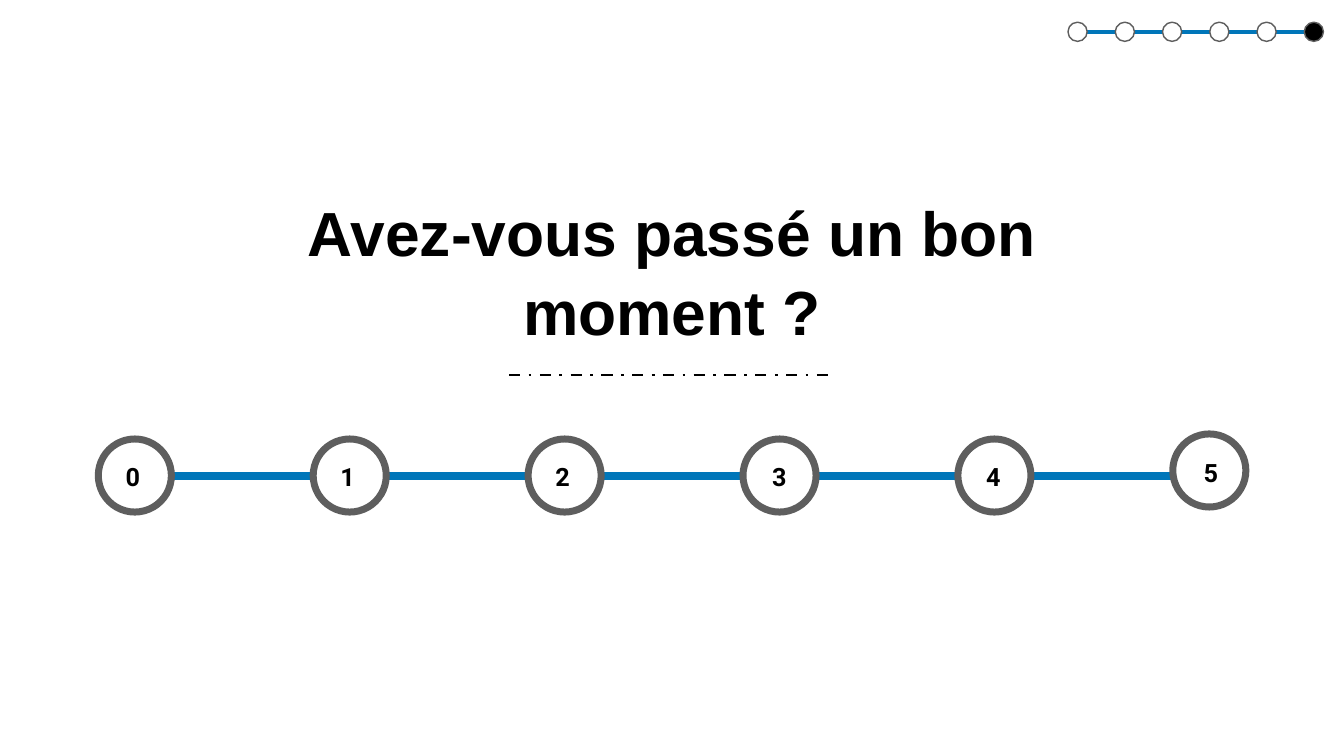
from lxml import etree
from pptx import Presentation
from pptx.dml.color import RGBColor
from pptx.enum.dml import MSO_LINE
from pptx.enum.shapes import MSO_CONNECTOR, MSO_SHAPE
from pptx.enum.text import MSO_ANCHOR, PP_ALIGN
from pptx.oxml.ns import qn
from pptx.util import Pt

STRAIGHT = MSO_CONNECTOR.STRAIGHT
OVAL = MSO_SHAPE.OVAL
DASH_DOT = MSO_LINE.DASH_DOT
MIDDLE, TOP = MSO_ANCHOR.MIDDLE, MSO_ANCHOR.TOP
CENTER, LEFT = PP_ALIGN.CENTER, PP_ALIGN.LEFT

BLACK, WHITE, BLUE, GREY = "000000", "FFFFFF", "0076B9", "5E5E5E"

TITLE = "Avez-vous passé un bon moment ?"
# label, circle top, label left inside the circle, label top
SCALE = [
    ("0", 627.1, 33.1, 653),
    ("1", 627.1, 33.1, 653),
    ("2", 627.1, 33.1, 653),
    ("3", 627.1, 36, 653.8),
    ("4", 627.1, 34.6, 653.8),
    ("5", 619.9, 38.2, 648),
]
PROGRESS = [WHITE] * 5 + [BLACK]

SCALE_LEFT, SCALE_STEP, SCALE_SIZE = 140.4, 307, 104.4
PROGRESS_LEFT, PROGRESS_STEP, PROGRESS_SIZE = 1525.7, 67.5, 27.4


def color(value):
    return RGBColor.from_string(value)


def add_line(shapes, left, right, y, line_color, width, dash=None):
    line = shapes.add_connector(STRAIGHT, Pt(left), Pt(y), Pt(right), Pt(y))
    line.line.color.rgb = color(line_color)
    line.line.width = Pt(width)
    if dash is not None:
        line.line.dash_style = dash
    etree.SubElement(line._element.spPr, qn("a:effectLst"))


def add_circle(shapes, left, top, size, fill, width):
    circle = shapes.add_shape(OVAL, Pt(left), Pt(top), Pt(size), Pt(size))
    circle.shadow.inherit = False
    circle.rotation = 270
    circle.fill.solid()
    circle.fill.fore_color.rgb = color(fill)
    circle.line.color.rgb = color(GREY)
    circle.line.width = Pt(width)


def write(shape, text, font, size, align, anchor):
    frame = shape.text_frame
    frame.word_wrap = True
    frame.vertical_anchor = anchor
    frame.margin_left = frame.margin_right = Pt(5.8)
    frame.margin_top = frame.margin_bottom = Pt(5.8)
    frame.text = text
    para = frame.paragraphs[0]
    para.alignment = align
    para.font.name = font
    para.font.size = Pt(size)
    para.font.bold = True
    para.font.color.rgb = color(BLACK)
    return para


def main():
    deck = Presentation()
    deck.slide_width, deck.slide_height = Pt(1920), Pt(1080)
    page = deck.slides.add_slide(deck.slide_layouts[5])
    shapes = page.shapes

    title = shapes.title
    title.left, title.top = Pt(211), Pt(319.7)
    title.width, title.height = Pt(1498.3), Pt(129.6)
    para = write(title, TITLE, "Arial", 89, CENTER, MIDDLE)
    para.line_spacing = 1.05

    add_line(shapes, 201.6, 1723, 679.7, BLUE, 12)
    for index, (label, top, label_left, label_top) in enumerate(SCALE):
        left = SCALE_LEFT + index * SCALE_STEP
        add_circle(shapes, left, top, SCALE_SIZE, WHITE, 10)
        box = shapes.add_textbox(Pt(left + label_left), Pt(label_top), Pt(38.2), Pt(53.3))
        write(box, label, "Roboto", 36, LEFT, TOP)

    add_line(shapes, 727.2, 1193, 535.7, BLACK, 4, DASH_DOT)

    tracker = shapes.add_group_shape().shapes
    add_line(tracker, 1542.2, 1868.4, 45.4, BLUE, 5)
    for index, fill in enumerate(PROGRESS):
        left = PROGRESS_LEFT + index * PROGRESS_STEP
        add_circle(tracker, left, 31.7, PROGRESS_SIZE, fill, 2)

    deck.save("out.pptx")


if __name__ == "__main__":
    main()
